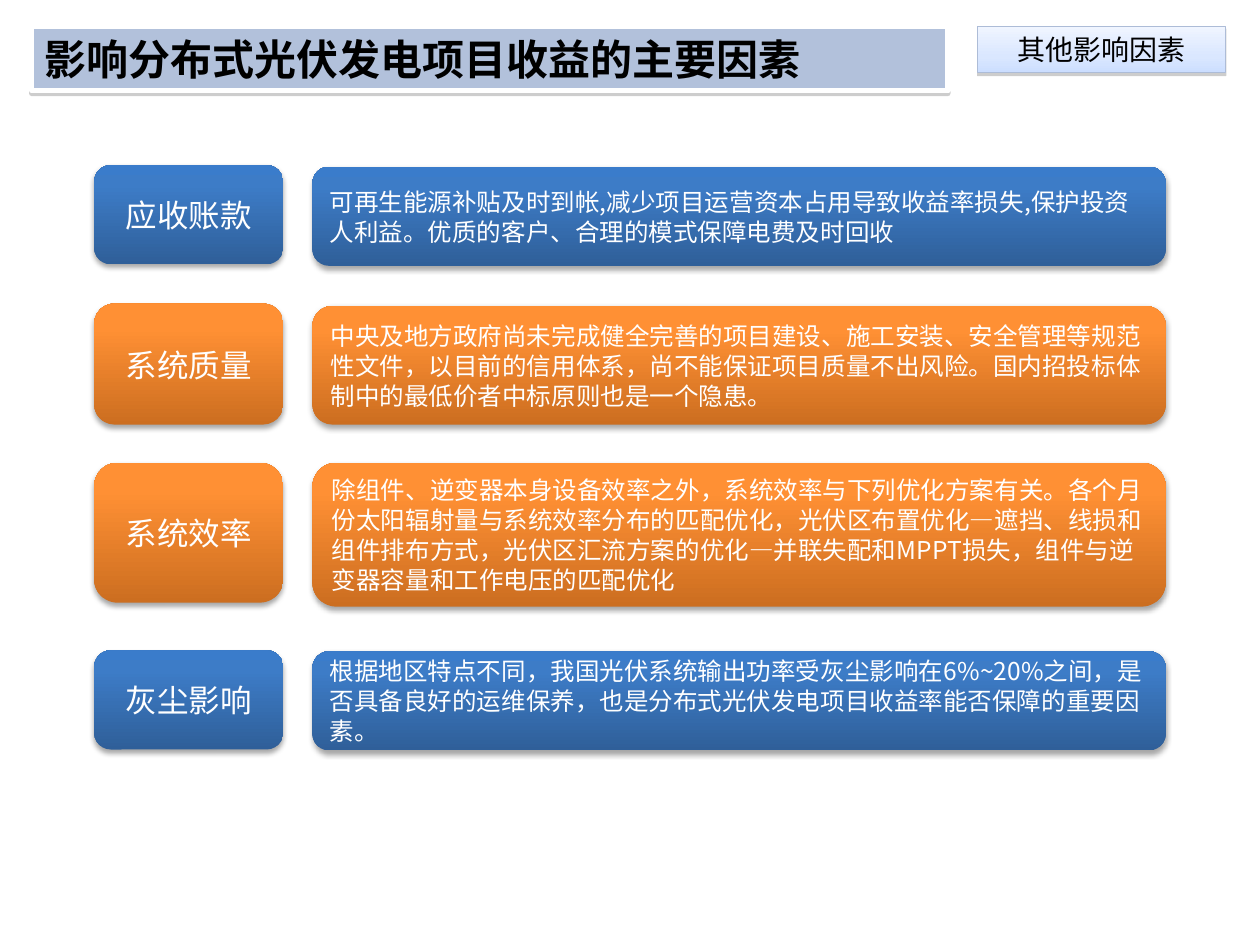
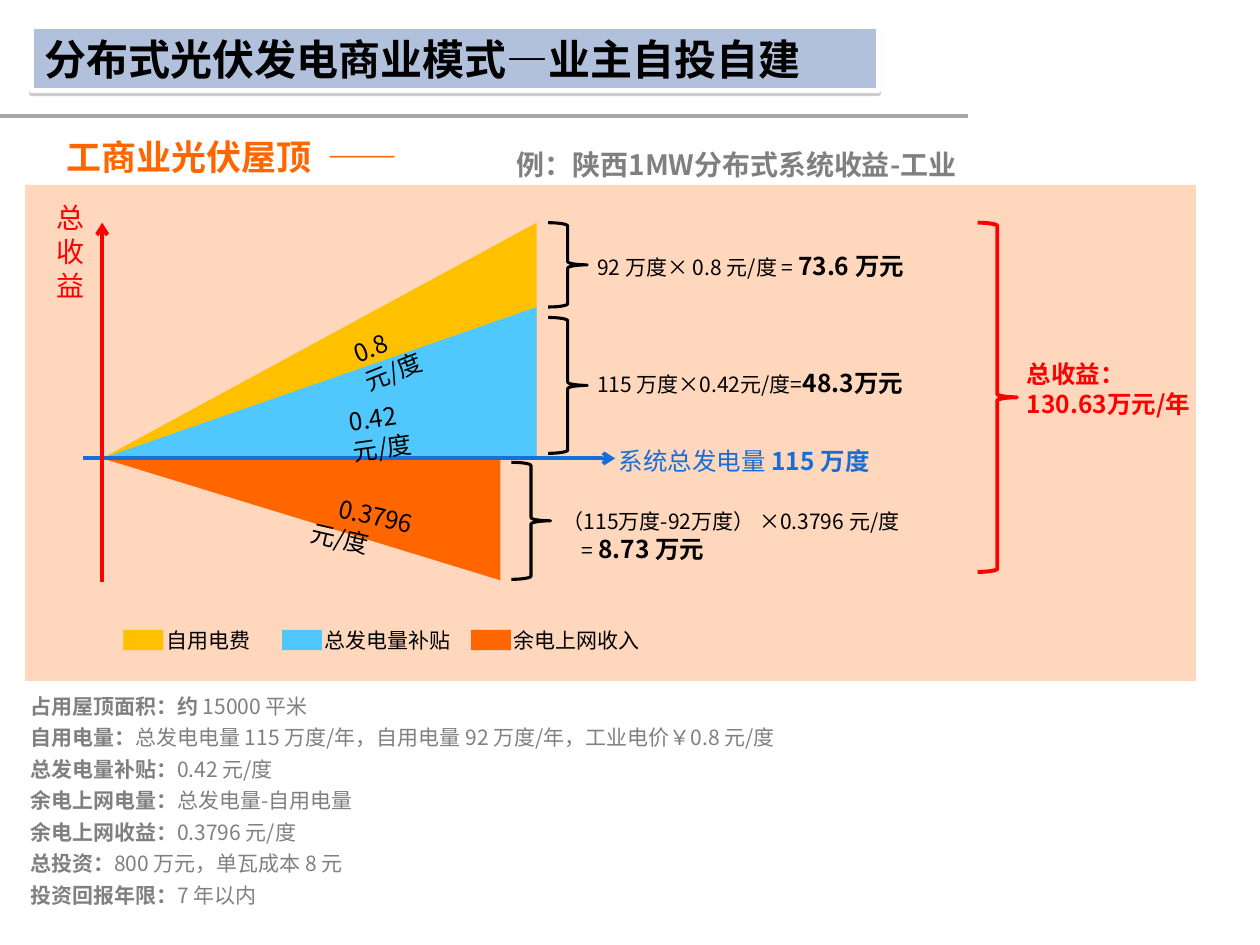
from lxml import etree
from pptx import Presentation
from pptx.dml.color import RGBColor
from pptx.enum import shapes, text
from pptx.oxml import ns
from pptx.util import Cm, Pt

BLACK = RGBColor(0x00, 0x00, 0x00)
WHITE = RGBColor(0xFF, 0xFF, 0xFF)
GREY = RGBColor(0x80, 0x80, 0x80)
RULE_GREY = RGBColor(0xA6, 0xA6, 0xA6)
BAND = RGBColor(0xB2, 0xC1, 0xDB)
TAB_EDGE = RGBColor(0xAD, 0xBC, 0xD7)
YELLOW = RGBColor(0xFF, 0xC0, 0x00)
SKY = RGBColor(0x50, 0xC8, 0xFE)
ORANGE = RGBColor(0xFF, 0x66, 0x00)
RED = RGBColor(0xFF, 0x00, 0x00)
AXIS_BLUE = RGBColor(0x16, 0x6E, 0xD8)

TAB_STOPS = [(0, RGBColor(0xF0, 0xF5, 0xFF)), (65, RGBColor(0xDA, 0xE7, 0xFF)),
             (100, RGBColor(0xCC, 0xDE, 0xFF))]
BLUE_STOPS = [(0, RGBColor(0x2F, 0x5F, 0x99)), (80, RGBColor(0x3D, 0x7C, 0xC7)),
              (100, RGBColor(0x3A, 0x7C, 0xCB))]
ORANGE_STOPS = [(0, RGBColor(0xCC, 0x6E, 0x20)), (80, RGBColor(0xFF, 0x90, 0x34)),
                (100, RGBColor(0xFF, 0x91, 0x36))]

BAND_SHADOW = (GREY, 38, 0, 1.6)
CARD_SHADOW = (BLACK, 35, 3.1, 1.8)

FONT = "Noto Sans CJK SC"
LINE_HEIGHT = 1.22
KIND = shapes.MSO_SHAPE
ALIGN = text.PP_ALIGN
ANCHOR = text.MSO_ANCHOR


def child(parent, tag, **attributes):
    return etree.SubElement(parent, ns.qn(tag), {k: str(v) for k, v in attributes.items()})


def set_shadow(shape, color, alpha, blur, distance):
    shape.shadow.inherit = False
    effects = shape._element.spPr.find(ns.qn("a:effectLst"))
    outer = child(effects, "a:outerShdw", blurRad=Pt(blur), dist=Pt(distance),
                  dir=5400000, rotWithShape=0)
    child(child(outer, "a:srgbClr", val=color), "a:alpha", val=alpha * 1000)


def set_gradient(shape, stops, angle):
    shape.fill.gradient()
    gradient = shape._element.spPr.find(ns.qn("a:gradFill"))
    for part in list(gradient):
        gradient.remove(part)
    stop_list = child(gradient, "a:gsLst")
    for position, color in stops:
        child(child(stop_list, "a:gs", pos=position * 1000), "a:srgbClr", val=color)
    child(gradient, "a:lin", ang=angle * 60000, scaled=0)


def add_shape(page, kind, box, fill=None, line=None, width=1):
    shape = page.shapes.add_shape(kind, *map(Cm, box))
    shape.shadow.inherit = False
    if fill is None:
        shape.fill.background()
    else:
        shape.fill.solid()
        shape.fill.fore_color.rgb = fill
    if line is None:
        shape.line.fill.background()
    else:
        shape.line.color.rgb = line
        shape.line.width = Pt(width)
    return shape


def add_line(page, start, end, color, width, arrow=False):
    line = page.shapes.add_connector(shapes.MSO_CONNECTOR.STRAIGHT, *map(Cm, start + end))
    line.line.color.rgb = color
    line.line.width = Pt(width)
    if arrow:
        child(line.line._get_or_add_ln(), "a:tailEnd", type="arrow")
    child(line._element.spPr, "a:effectLst")


def write(shape, lines, size, color=BLACK, bold=False, align=ALIGN.LEFT,
          anchor=ANCHOR.TOP, font=FONT, spacing=None, indents=(), tab=None):
    frame = shape.text_frame
    frame.word_wrap = True
    frame.vertical_anchor = anchor
    for number, spans in enumerate(lines):
        para = frame.paragraphs[0] if number == 0 else frame.add_paragraph()
        spans = [(spans, {})] if isinstance(spans, str) else spans
        largest = max(style.get("size", size) for _, style in spans)
        para.alignment = align
        para.line_spacing = Pt(spacing or round(largest * LINE_HEIGHT, 1))
        properties = para._p.get_or_add_pPr()
        if number < len(indents):
            left, first = indents[number]
            properties.set("marL", str(Cm(left)))
            properties.set("indent", str(Cm(first)))
        if tab:
            child(child(properties, "a:tabLst"), "a:tab", pos=Cm(tab), algn="l")
        para.font.size = Pt(size)
        para.font.bold = bold
        para.font.color.rgb = color
        para.font.name = font
        child(properties.find(ns.qn("a:defRPr")), "a:ea", typeface=FONT)
        for words, style in spans:
            if "\v" in words:
                first_line, words = words.split("\v")
                para.add_run().text = first_line
                para.add_line_break()
            span = para.add_run()
            span.text = words
            if "size" in style:
                span.font.size = Pt(style["size"])
            if "bold" in style:
                span.font.bold = style["bold"]


def add_text(page, box, lines, size, **style):
    label = page.shapes.add_textbox(*map(Cm, box))
    write(label, lines, size, **style)
    return label


def title_band(page, box, title):
    band = add_shape(page, KIND.RECTANGLE, box, BAND, WHITE, 3)
    set_shadow(band, *BAND_SHADOW)
    write(band, [title], 24, bold=True)


def topic_tab(page, box, topic):
    tab = add_shape(page, KIND.RECTANGLE, box, line=TAB_EDGE, width=0.75)
    set_gradient(tab, TAB_STOPS, 90)
    set_shadow(tab, *BAND_SHADOW)
    write(tab, [topic], 16, align=ALIGN.CENTER, font="Roboto")


def card(page, box, stops, words, size, align):
    shape = add_shape(page, KIND.ROUNDED_RECTANGLE, box)
    set_gradient(shape, stops, 270)
    set_shadow(shape, *CARD_SHADOW)
    write(shape, [words], size, WHITE, align=align, anchor=ANCHOR.MIDDLE)


def factor_rows(page, box):
    left, top, width = box
    label_width, body_offset = 3.81, 4.4
    rows = [
        ((0, 2), (0.03, 2), BLUE_STOPS, "应收账款",
         "可再生能源补贴及时到帐,减少项目运营资本占用导致收益率损失,保护投资人利益。"
         "优质的客户、合理的模式保障电费及时回收"),
        ((2.79, 2.44), (2.84, 2.39), ORANGE_STOPS, "系统质量",
         "中央及地方政府尚未完成健全完善的项目建设、施工安装、安全管理等规范性文件，"
         "以目前的信用体系，尚不能保证项目质量不出风险。"
         "国内招投标体制中的最低价者中标原则也是一个隐患。"),
        ((6, 2.82), (6, 2.9), ORANGE_STOPS, "系统效率",
         "除组件、逆变器本身设备效率之外，系统效率与下列优化方案有关。"
         "各个月份太阳辐射量与系统效率分布的匹配优化，光伏区布置优化—遮挡、"
         "线损和组件排布方式，光伏区汇流方案的优化—并联失配和MPPT损失，"
         "组件与逆变器容量和工作电压的匹配优化"),
        ((9.78, 2), (9.8, 2), BLUE_STOPS, "灰尘影响",
         "根据地区特点不同，我国光伏系统输出功率受灰尘影响在6%~20%之间，"
         "是否具备良好的运维保养，也是分布式光伏发电项目收益率能否保障的重要因素。"),
    ]
    for (label_y, label_h), (body_y, body_h), stops, factor, detail in rows:
        card(page, (left, top + label_y, label_width, label_h), stops, factor, 18, ALIGN.CENTER)
        card(page, (left + body_offset, top + body_y, width - body_offset, body_h),
             stops, detail, 14, ALIGN.LEFT)


def income_chart(page, box):
    left, top, _, _ = box

    def at(x, y, *size):
        return (left + x, top + y, *size)

    panel = add_shape(page, KIND.RECTANGLE, box, ORANGE)
    child(panel._element.spPr.find(".//" + ns.qn("a:srgbClr")), "a:alpha", val=26000)

    legend = [(1.98, YELLOW, "自用电费"), (5.18, SKY, "总发电量补贴"),
              (8.99, ORANGE, "余电上网收入")]
    for x, color, name in legend:
        add_shape(page, KIND.RECTANGLE, at(x, 8.97, 0.8, 0.41), color)
        add_text(page, at(x + 0.61, 8.79, 3.8, 0.76), [name], 12)

    zero_x, zero_y = 1.55, 5.51
    wedges = [(8.76, 4.75, YELLOW, True), (8.76, 3.05, SKY, True), (8.03, 2.46, ORANGE, False)]
    for width, height, color, upward in wedges:
        y = zero_y - height if upward else zero_y
        wedge = add_shape(page, KIND.ISOSCELES_TRIANGLE, at(zero_x, y, width, height), color)
        wedge.adjustments[0] = 1
        if not upward:
            wedge._element.spPr.find(ns.qn("a:xfrm")).set("flipV", "1")

    add_line(page, at(1.17, zero_y), at(11.89, zero_y), AXIS_BLUE, 2.25, arrow=True)
    add_line(page, at(zero_x, 8), at(zero_x, 0.76), RED, 2.25, arrow=True)
    add_text(page, at(0.38, 0.18, 0.97, 2.31), ["总收益"], 16, color=RED)

    braces = [(10.54, 0.76, 1.7, BLACK, 1.75), (9.8, 5.59, 2.36, BLACK, 1.75),
              (10.54, 2.67, 2.74, BLACK, 1.75), (19.2, 0.76, 7.04, RED, 2.25)]
    for x, y, height, color, width in braces:
        add_shape(page, KIND.RIGHT_BRACE, at(x, y, 0.79, height), line=color, width=width)

    rates = [(5.61, 6.35, 3.89, 12.9, "0.3796", 0.44), (6.27, 4.19, 2.72, 352, "0.42", 0),
             (6.32, 2.62, 2.44, 338.2, "0.8", 0)]
    for x, y, width, angle, rate, indent in rates:
        label = add_text(page, at(x, y, width, 0.86), [rate + "\v元/度"], 14,
                         indents=[(0, indent)])
        label.rotation = angle

    strong = {"bold": True, "size": 14}
    add_text(page, at(11.71, 5.13, 7.01, 0.86),
             [[("系统总发电量 ", {}), ("115 万度", {"bold": True})]], 14, color=AXIS_BLUE)
    add_text(page, at(11.28, 1.19, 8.76, 0.86),
             [[("92 万度× 0.8 元/度 = ", {}), ("73.6 万元", strong)]], 12)
    add_text(page, at(11.28, 3.56, 8.76, 0.86),
             [[("115 万度×0.42元/度=", {}), ("48.3万元", strong)]], 12)
    add_text(page, at(10.59, 6.38, 8.61, 1.37),
             ["（115万度-92万度） ×0.3796 元/度", [("= ", {}), ("8.73 万元", strong)]], 12,
             indents=[(0, 0), (0.38, 0)])
    add_text(page, at(19.94, 3.38, 4.3, 1.45), ["总收益：", "130.63万元/年"], 14,
             color=RED, bold=True)


def project_facts(page, box):
    facts = [
        ("占用屋顶面积：约 ", "15000 平米"),
        ("自用电量：", "总发电电量 115 万度/年，自用电量 92 万度/年，工业电价￥0.8 元/度"),
        ("总发电量补贴：", "0.42 元/度"),
        ("余电上网电量：", "总发电量-自用电量"),
        ("余电上网收益：", "0.3796 元/度"),
        ("总投资：", "800 万元，单瓦成本 8 元"),
        ("投资回报年限：", "7 年以内"),
    ]
    lines = [[(name, {"bold": True}), (value, {})] for name, value in facts]
    add_text(page, box, lines, 12, color=GREY, spacing=18)


def factors_slide(page):
    title_band(page, (0.64, 0.53, 18.47, 1.3), "影响分布式光伏发电项目收益的主要因素")
    topic_tab(page, (19.71, 0.53, 5, 0.94), "其他影响因素")
    factor_rows(page, (1.9, 3.33, 21.6))


def owner_model_slide(page):
    project_facts(page, (0.36, 13.72, 21.56, 5.33))
    income_chart(page, (0.51, 3.73, 23.6, 10))
    add_text(page, (7.7, 2.51, 14.3, 1.22), ["例：陕西1MW分布式系统收益-工业"], 16,
             color=GREY, bold=True, align=ALIGN.CENTER, spacing=29)
    add_line(page, (0, 2.34), (19.51, 2.34), RULE_GREY, 2.5)
    add_text(page, (1.09, 2.9, 10.97, 0.89), ["工商业光伏屋顶\t——"], 20, color=ORANGE,
             bold=True, font="Calibri", spacing=16, tab=5.27)
    title_band(page, (0.64, 0.53, 17.07, 1.3), "分布式光伏发电商业模式—业主自投自建")


def main():
    deck = Presentation()
    deck.slide_width, deck.slide_height = Cm(25.4), Cm(19.05)
    for build in (factors_slide, owner_model_slide):
        build(deck.slides.add_slide(deck.slide_layouts[6]))
    deck.save("out.pptx")


if __name__ == "__main__":
    main()
